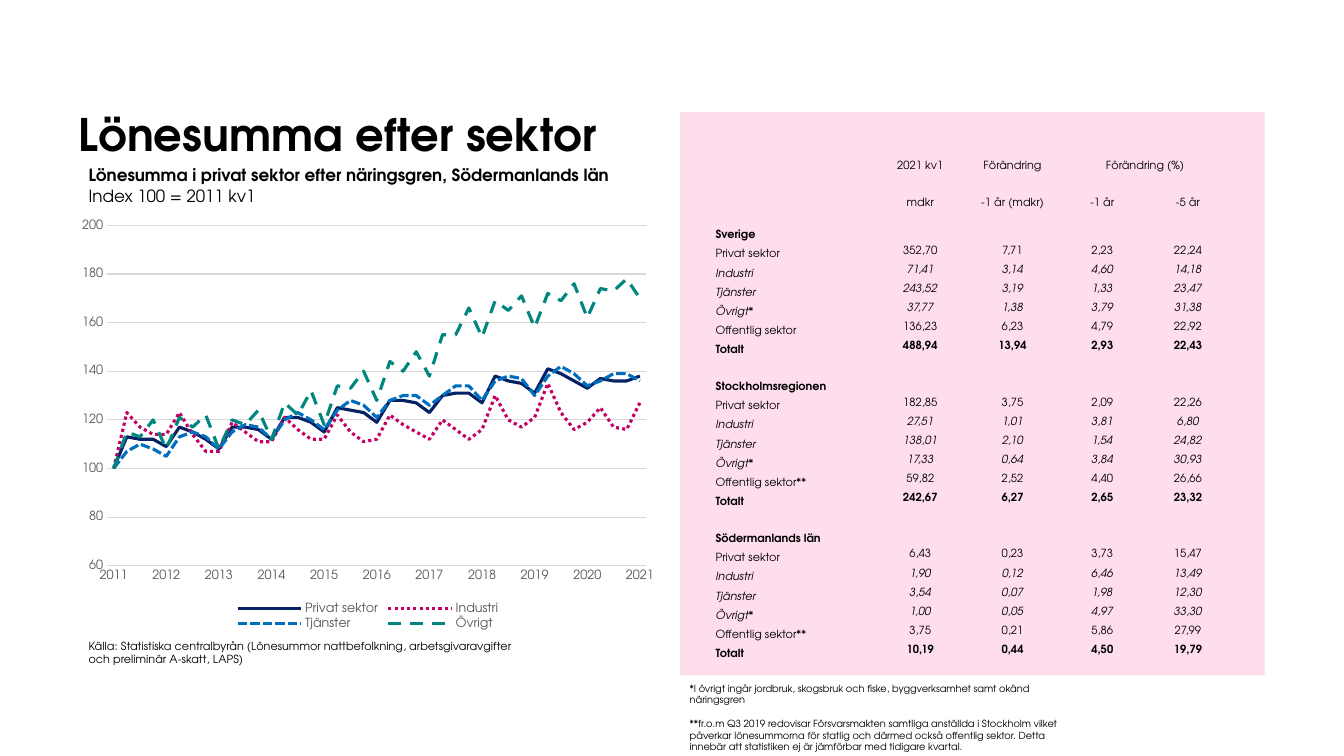
from lxml import etree
from pptx import Presentation
from pptx.chart.data import CategoryChartData
from pptx.dml.color import RGBColor
from pptx.enum.chart import XL_CHART_TYPE, XL_LEGEND_POSITION, XL_MARKER_STYLE, XL_TICK_MARK
from pptx.enum.dml import MSO_LINE
from pptx.enum.shapes import MSO_SHAPE
from pptx.enum.text import MSO_ANCHOR, PP_ALIGN
from pptx.oxml.ns import qn
from pptx.util import Pt

LINE_CHART = XL_CHART_TYPE.LINE
LEGEND_BOTTOM = XL_LEGEND_POSITION.BOTTOM
NO_MARKER = XL_MARKER_STYLE.NONE
NO_TICK = XL_TICK_MARK.NONE
SOLID, DOTTED = MSO_LINE.SOLID, MSO_LINE.ROUND_DOT
SHORT_DASH, LONG_DASH = MSO_LINE.SQUARE_DOT, MSO_LINE.DASH
RECTANGLE = MSO_SHAPE.RECTANGLE
TOP, MIDDLE, BOTTOM = MSO_ANCHOR.TOP, MSO_ANCHOR.MIDDLE, MSO_ANCHOR.BOTTOM
LEFT, CENTER = PP_ALIGN.LEFT, PP_ALIGN.CENTER

# Content
TITLE = "Lönesumma efter sektor"
SUBTITLE = ("Lönesumma i privat sektor efter näringsgren, Södermanlands län", "Index 100 = 2011 kv1")
SOURCE = ("Källa: Statistiska centralbyrån (Lönesummor nattbefolkning, arbetsgivaravgifter "
          "och preliminär A-skatt, LAPS)")
FOOTNOTES = (
    "*I övrigt ingår jordbruk, skogsbruk och fiske, byggverksamhet samt okänd näringsgren",
    "**fr.o.m Q3 2019 redovisar Försvarsmakten samtliga anställda i Stockholm vilket påverkar "
    "lönesummorna för statlig och därmed också offentlig sektor. Detta innebär att statistiken "
    "ej är jämförbar med tidigare kvartal.",
)
HEADERS = (("", "2021 kv1", "Förändring", "Förändring (%)", ""),
           ("", "mdkr", "-1 år (mdkr)", "-1 år", "-5 år"))
REGIONS = (
    ("Sverige", (
        ("Privat sektor", "352,70", "7,71", "2,23", "22,24"),
        ("Industri", "71,41", "3,14", "4,60", "14,18"),
        ("Tjänster", "243,52", "3,19", "1,33", "23,47"),
        ("Övrigt*", "37,77", "1,38", "3,79", "31,38"),
        ("Offentlig sektor", "136,23", "6,23", "4,79", "22,92"),
        ("Totalt", "488,94", "13,94", "2,93", "22,43"))),
    ("Stockholmsregionen", (
        ("Privat sektor", "182,85", "3,75", "2,09", "22,26"),
        ("Industri", "27,51", "1,01", "3,81", "6,80"),
        ("Tjänster", "138,01", "2,10", "1,54", "24,82"),
        ("Övrigt*", "17,33", "0,64", "3,84", "30,93"),
        ("Offentlig sektor**", "59,82", "2,52", "4,40", "26,66"),
        ("Totalt", "242,67", "6,27", "2,65", "23,32"))),
    ("Södermanlands län", (
        ("Privat sektor", "6,43", "0,23", "3,73", "15,47"),
        ("Industri", "1,90", "0,12", "6,46", "13,49"),
        ("Tjänster", "3,54", "0,07", "1,98", "12,30"),
        ("Övrigt*", "1,00", "0,05", "4,97", "33,30"),
        ("Offentlig sektor**", "3,75", "0,21", "5,86", "27,99"),
        ("Totalt", "10,19", "0,44", "4,50", "19,79"))),
)
ITALIC_LABELS = ("Industri", "Tjänster", "Övrigt*")
QUARTERS = [str(2011 + i // 4) if i % 4 == 0 else "" for i in range(41)]
SERIES = (
    ("Privat sektor", "052364", SOLID, (
        100, 113, 112, 112, 109, 117, 115, 112, 108, 117, 117, 116, 112, 121, 121, 119, 115, 125, 124, 123,
        119, 128, 128, 127, 123, 130, 131, 131, 127, 138, 136, 135, 131, 141, 139, 136, 133, 137, 136, 136, 138)),
    ("Industri", "C40064", DOTTED, (
        100, 123, 117, 114, 114, 123, 114, 107, 107, 119, 115, 111, 111, 121, 116, 112, 112, 122, 115, 111,
        112, 122, 118, 115, 112, 120, 116, 112, 116, 130, 120, 117, 121, 135, 123, 116, 119, 125, 117, 116, 127)),
    ("Tjänster", "006EBF", SHORT_DASH, (
        100, 107, 110, 108, 105, 113, 115, 113, 108, 115, 118, 117, 112, 120, 123, 120, 116, 124, 128, 126,
        121, 128, 130, 130, 126, 130, 134, 134, 128, 136, 138, 137, 130, 138, 142, 139, 134, 136, 139, 139, 136)),
    ("Övrigt", "00867F", LONG_DASH, (
        100, 115, 113, 120, 108, 121, 117, 122, 108, 120, 118, 124, 112, 127, 122, 132, 118, 134, 133, 140,
        128, 144, 140, 148, 138, 155, 155, 166, 154, 169, 165, 171, 158, 172, 169, 176, 162, 174, 173, 178, 170)),
)

THEME = {"font": "TeX Gyre Adventor", "text": "000000", "axis": "595959", "grid": "D9D9D9",
         "panel": "FEDEED", "title": 32, "subtitle": 12, "chart": 9, "small": 8, "note": 7}
NO_STYLE_TABLE = "{2D5ABB26-0587-4C30-8999-92F81FD0307C}"
COLUMN_WIDTHS = (114.5, 64.8, 67, 61.2, 61.2)
TALL_ROW, FIRST_REGION_ROW, DATA_ROW = 26.4, 22.8, 13.7
PLOT_LAYOUT = {"x": 0.06, "y": 0.03, "w": 0.91, "h": 0.81}
LEGEND_LAYOUT = {"x": 0.27, "y": 0.92, "w": 0.46, "h": 0.08}


def style_font(font, size, color=THEME["text"], bold=False, italic=False):
    font.name, font.size, font.bold, font.italic = THEME["font"], Pt(size), bold, italic
    font.color.rgb = RGBColor.from_string(color)


def add_run(paragraph, text, size, bold=False, italic=False):
    run = paragraph.add_run()
    run.text = text
    style_font(run.font, size, bold=bold, italic=italic)


def add_text_frame(slide, box, anchor=TOP):
    frame = slide.shapes.add_textbox(*map(Pt, box)).text_frame
    frame.word_wrap = True
    frame.vertical_anchor = anchor
    return frame


def fill_cell(cell, text, align, anchor, bold=False, italic=False):
    cell.fill.background()
    cell.margin_left = cell.margin_right = cell.margin_top = Pt(0.7)
    cell.margin_bottom = Pt(0)
    cell.vertical_anchor = anchor
    paragraph = cell.text_frame.paragraphs[0]
    paragraph.alignment = align
    if text:
        add_run(paragraph, text, THEME["small"], bold, italic)
    else:
        etree.SubElement(paragraph._p, qn("a:endParaRPr")).set("sz", str(THEME["small"] * 100))


def set_layout(parent, values, position, target=None):
    for old_layout in parent.findall(qn("c:layout")):
        parent.remove(old_layout)
    layout = etree.Element(qn("c:layout"))
    manual = etree.SubElement(layout, qn("c:manualLayout"))
    if target:
        etree.SubElement(manual, qn("c:layoutTarget")).set("val", target)
    for mode in ("xMode", "yMode"):
        etree.SubElement(manual, qn("c:" + mode)).set("val", "edge")
    for name, value in values.items():
        etree.SubElement(manual, qn("c:" + name)).set("val", str(value))
    parent.insert(position, layout)


def add_sector_table(slide):
    rows = [(TALL_ROW, header, False, False, BOTTOM) for header in HEADERS]
    for index, (region, sectors) in enumerate(REGIONS):
        height = TALL_ROW if index else FIRST_REGION_ROW
        rows.append((height, (region, "", "", "", ""), True, False, MIDDLE))
        for sector in sectors:
            rows.append((DATA_ROW, sector, sector[0] == "Totalt", sector[0] in ITALIC_LABELS, MIDDLE))
    table = slide.shapes.add_table(len(rows), len(COLUMN_WIDTHS), Pt(510.5), Pt(96.5),
                                   Pt(sum(COLUMN_WIDTHS)), Pt(sum(row[0] for row in rows))).table
    table.first_row = table.horz_banding = False
    table._tbl.tblPr.find(qn("a:tableStyleId")).text = NO_STYLE_TABLE
    for column, width in zip(table.columns, COLUMN_WIDTHS):
        column.width = Pt(width)
    for r, (height, texts, bold, italic, value_anchor) in enumerate(rows):
        table.rows[r].height = Pt(height)
        for c, text in enumerate(texts):
            fill_cell(table.cell(r, c), text, CENTER if c else LEFT,
                      value_anchor if c else BOTTOM, bold, italic)
    table.cell(0, 3).merge(table.cell(0, 4))


def add_index_chart(slide):
    data = CategoryChartData()
    data.categories = QUARTERS
    for name, _, _, values in SERIES:
        data.add_series(name, values)
    chart = slide.shapes.add_chart(LINE_CHART, Pt(51.1), Pt(152), Pt(423.4), Pt(300.2), data).chart
    style_font(chart.font, 10)
    chart.has_title = False
    chart.has_legend = True
    chart.legend.position = LEGEND_BOTTOM
    chart.legend.include_in_layout = False
    style_font(chart.legend.font, THEME["chart"], THEME["axis"])
    for series, (_, color, dash, _) in zip(chart.plots[0].series, SERIES):
        series.smooth = False
        series.marker.style = NO_MARKER
        line = series.format.line
        line.width, line.dash_style = Pt(2.25), dash
        line.color.rgb = RGBColor.from_string(color)
    chart.plots[0].vary_by_categories = False

    # Axes and gridlines
    value_axis, category_axis = chart.value_axis, chart.category_axis
    for axis in (value_axis, category_axis):
        axis.major_tick_mark = axis.minor_tick_mark = NO_TICK
        style_font(axis.tick_labels.font, THEME["chart"], THEME["axis"])
    value_axis.minimum_scale, value_axis.maximum_scale, value_axis.major_unit = 60, 200, 20
    value_axis.format.line.fill.background()
    for line in (value_axis.major_gridlines.format.line, category_axis.format.line):
        line.width = Pt(0.75)
        line.color.rgb = RGBColor.from_string(THEME["grid"])

    # Plot and legend areas
    plot_area = chart._chartSpace.chart.plotArea
    set_layout(plot_area, PLOT_LAYOUT, 0, "inner")
    set_layout(chart.legend._element, LEGEND_LAYOUT, 1)


def main():
    presentation = Presentation()
    presentation.slide_width, presentation.slide_height = Pt(960), Pt(540)
    slide = presentation.slides.add_slide(presentation.slide_layouts[6])

    # Title and source
    title = add_text_frame(slide, (56.2, 26.6, 663.8, 87.8), BOTTOM)
    title.margin_left = title.margin_right = title.margin_top = title.margin_bottom = Pt(0)
    add_run(title.paragraphs[0], TITLE, THEME["title"], bold=True)
    source = add_text_frame(slide, (56.2, 452.9, 317.5, 26.6))
    add_run(source.paragraphs[0], SOURCE, THEME["small"])

    # Pink panel
    panel = slide.shapes.add_shape(RECTANGLE, Pt(485.6), Pt(80), Pt(417.8), Pt(402.5))
    panel.shadow.inherit = False
    panel.fill.solid()
    panel.fill.fore_color.rgb = RGBColor.from_string(THEME["panel"])
    panel.line.fill.background()

    # Chart heading
    heading = add_text_frame(slide, (56.2, 114.5, 417.6, 36)).paragraphs[0]
    add_run(heading, SUBTITLE[0], THEME["subtitle"], bold=True)
    heading.add_line_break()
    add_run(heading, SUBTITLE[1], THEME["subtitle"])

    add_sector_table(slide)

    # Footnotes
    notes = add_text_frame(slide, (485.6, 483.8, 280.8, 58.3))
    for index, note in enumerate(FOOTNOTES):
        paragraph = notes.add_paragraph() if index else notes.paragraphs[0]
        if index:
            paragraph.space_before = Pt(8.4)
        add_run(paragraph, note, THEME["note"])

    add_index_chart(slide)
    presentation.save("out.pptx")


if __name__ == "__main__":
    main()
